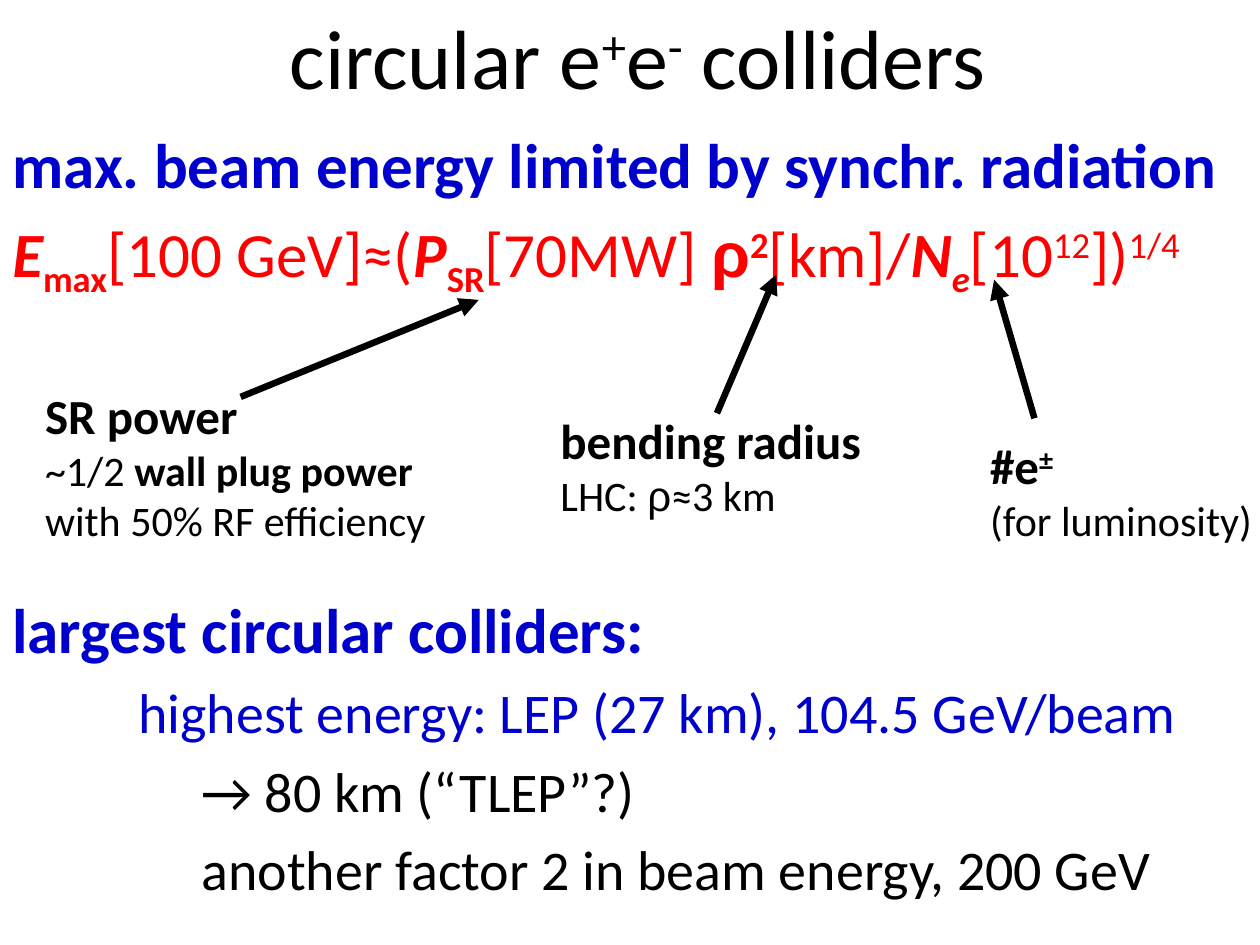
from lxml import etree
from pptx import Presentation
from pptx.dml.color import RGBColor
from pptx.enum.shapes import MSO_CONNECTOR
from pptx.enum.text import MSO_ANCHOR, PP_ALIGN
from pptx.oxml.ns import qn
from pptx.util import Inches, Pt

STRAIGHT = MSO_CONNECTOR.STRAIGHT
MIDDLE, TOP = MSO_ANCHOR.MIDDLE, MSO_ANCHOR.TOP
CENTER, LEFT = PP_ALIGN.CENTER, PP_ALIGN.LEFT
COLORS = {"black": "000000", "blue": "0000CC", "red": "FF0000"}
SUPER, SUB = 30000, -25000  # baseline shifts in 1/1000 percent


def add_text(slide, box, paragraphs, anchor=TOP, align=LEFT, spacing=0):
    """Each paragraph: (size, color, indent, runs); each run: (text, style, baseline[, font]).

    The style letters are b for bold and i for italic; spacing is a share of the size.
    """
    shape = slide.shapes.add_textbox(*(Inches(length) for length in box))
    frame = shape.text_frame
    frame.word_wrap = True
    frame.vertical_anchor = anchor
    for index, (size, color, indent, runs) in enumerate(paragraphs):
        paragraph = frame.paragraphs[0] if index == 0 else frame.add_paragraph()
        paragraph.alignment = align
        if index and spacing:
            paragraph.space_before = Pt(round(size * spacing, 1))
        if indent:
            paragraph._p.get_or_add_pPr().set("marL", str(Inches(indent)))
        for text, style, baseline, *font_name in runs:
            run = paragraph.add_run()
            run.text = text
            font = run.font
            font.name = font_name[0] if font_name else "Calibri"
            font.size = Pt(size)
            font.bold = "b" in style
            font.italic = "i" in style
            font.color.rgb = RGBColor.from_string(COLORS[color])
            if baseline:
                run._r.get_or_add_rPr().set("baseline", str(baseline))


presentation = Presentation()
presentation.slide_width = Inches(10)
presentation.slide_height = Inches(7.5)
slide = presentation.slides.add_slide(presentation.slide_layouts[6])

# Largest colliders
add_text(slide, (0, 4.64, 10, 2.7), [
    (36, "blue", 0, [("largest circular colliders:", "b", 0)]),
    (32, "blue", 1, [("highest energy: LEP (27 km), 104.5 GeV/beam", "", 0)]),
    (32, "black", 1.5, [("→ 80 km (“TLEP”?)", "", 0)]),
    (32, "black", 1.5, [("another factor 2 in beam energy, 200 GeV", "", 0)]),
], spacing=0.2)

# Title
add_text(slide, (0.56, -0.26, 9, 1.41), [
    (48, "black", 0, [("circular e", "", 0), ("+", "", SUPER), ("e", "", 0),
                      ("-", "", SUPER), (" colliders", "", 0)]),
], anchor=MIDDLE, align=CENTER)

# Energy limit and formula
add_text(slide, (0, 0.95, 10, 1.5), [
    (36, "blue", 0, [("max. beam energy limited by synchr. radiation", "b", 0)]),
    (36, "red", 0, [
        ("E", "bi", 0), ("max", "b", SUB), ("[100 GeV]≈(", "", 0),
        ("P", "bi", 0), ("SR", "b", SUB), ("[70MW] ", "", 0),
        ("ρ", "b", 0, "Arial"), ("2", "b", SUPER), ("[km]/", "", 0),
        ("N", "bi", 0), ("e", "bi", SUB), ("[10", "", 0),
        ("12", "", SUPER), ("])", "", 0), ("1/4", "", SUPER)]),
], spacing=0.2)

# Explanations of the formula terms
add_text(slide, (0.26, 3.01, 7.87, 1.38), [
    (28, "black", 0, [("SR power", "b", 0)]),
    (24, "black", 0, [("~1/2 ", "", 0), ("wall plug power", "b", 0)]),
    (24, "black", 0, [("with 50% RF efficiency", "", 0)]),
])
add_text(slide, (4.35, 3.21, 7.4, 0.98), [
    (28, "black", 0, [("bending radius", "b", 0)]),
    (24, "black", 0, [("LHC: ", "", 0), ("ρ", "", 0, "Arial"), ("≈3 km", "", 0)]),
])
add_text(slide, (7.76, 3.41, 7.4, 0.98), [
    (28, "black", 0, [("#e", "b", 0), ("±", "b", SUPER)]),
    (24, "black", 0, [("(for luminosity)", "", 0)]),
])

# Arrows from the explanations to the terms
for ends in [(1.91, 3.15, 3.8, 2.38), (8.21, 3.32, 7.89, 2.22), (5.69, 3.28, 6.16, 2.18)]:
    arrow = slide.shapes.add_connector(STRAIGHT, *(Inches(length) for length in ends))
    arrow.line.width = Pt(3.75)
    arrow.line.color.rgb = RGBColor.from_string(COLORS["black"])
    etree.SubElement(arrow.line._get_or_add_ln(), qn("a:tailEnd"), type="triangle")
    etree.SubElement(arrow._element.spPr, qn("a:effectLst"))

presentation.save("out.pptx")
